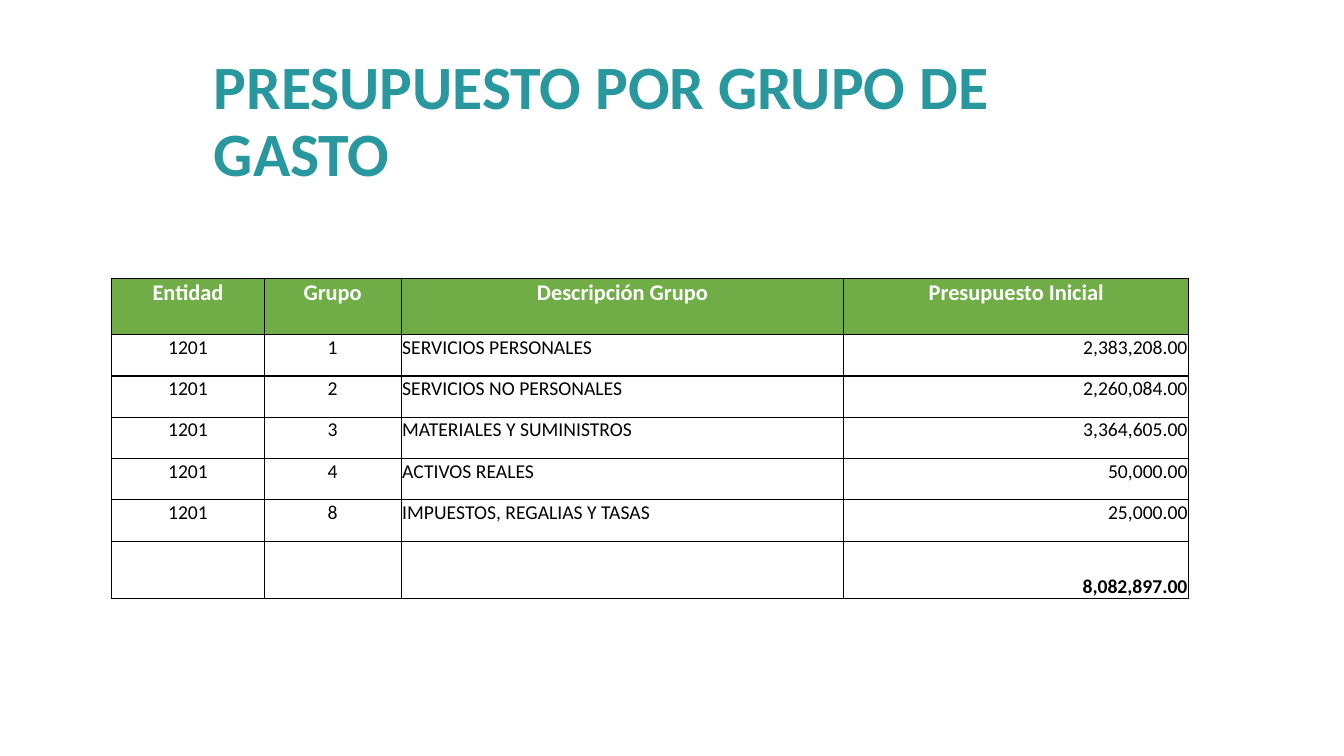
from lxml import etree
from pptx import Presentation
from pptx.dml.color import RGBColor
from pptx.enum.text import MSO_ANCHOR, MSO_AUTO_SIZE, PP_ALIGN
from pptx.oxml.ns import qn
from pptx.util import Inches, Pt

LEFT, CENTER, RIGHT = PP_ALIGN.LEFT, PP_ALIGN.CENTER, PP_ALIGN.RIGHT
TOP, MIDDLE, BOTTOM = MSO_ANCHOR.TOP, MSO_ANCHOR.MIDDLE, MSO_ANCHOR.BOTTOM

# Content
TITLE = "PRESUPUESTO POR GRUPO DE GASTO"
HEADER = ("Entidad", "Grupo", "Descripción Grupo", "Presupuesto Inicial")
ENTITY = "1201"
GROUPS = [
    ("1", "SERVICIOS PERSONALES", "2,383,208.00"),
    ("2", "SERVICIOS NO PERSONALES", "2,260,084.00"),
    ("3", "MATERIALES Y SUMINISTROS", "3,364,605.00"),
    ("4", "ACTIVOS REALES", "50,000.00"),
    ("8", "IMPUESTOS, REGALIAS Y TASAS", "25,000.00"),
]
TOTAL = ("", "", "", "8,082,897.00")

# Layout and theme
TITLE_BOX = {"left": 2.02, "top": 0.5, "width": 9.4, "height": 1.44}
TABLE_LEFT, TABLE_TOP = 1.11, 2.76
COLUMN_WIDTHS = (1.51, 1.36, 4.39, 3.42)
HEADER_HEIGHT, GROUP_HEIGHT, TOTAL_HEIGHT = 0.56, 0.41, 0.57
COLUMN_ALIGNMENTS = (CENTER, CENTER, LEFT, RIGHT)
CELL_MARGINS = {"margin_left": 0.01, "margin_right": 0.01,
                "margin_top": 0.01, "margin_bottom": 0}
THEME = {
    "font": "Calibri",
    "title": {"size": 44, "color": "28989E", "bold": True},
    "header": {"size": 16, "color": "FFFFFF", "bold": True},
    "body": {"size": 14, "color": "000000", "bold": False},
    "total": {"size": 14, "color": "000000", "bold": True},
    "header_fill": "70AD47",
    "body_fill": "FFFFFF",
    "border": "000000",
    "border_width": 1,
}


def format_font(font, style):
    values = {"name": THEME["font"], "size": Pt(style["size"]), "bold": style["bold"]}
    for name, value in values.items():
        setattr(font, name, value)
    font.color.rgb = RGBColor.from_string(style["color"])


def add_borders(cell):
    properties = cell._tc.get_or_add_tcPr()
    for side in ("a:lnL", "a:lnR", "a:lnT", "a:lnB"):
        line = etree.SubElement(properties, qn(side), w=str(Pt(THEME["border_width"])))
        fill = etree.SubElement(line, qn("a:solidFill"))
        etree.SubElement(fill, qn("a:srgbClr"), val=THEME["border"])


def fill_cell(cell, text, style, fill, alignment, anchor):
    for name, value in CELL_MARGINS.items():
        setattr(cell, name, Inches(value))
    cell.vertical_anchor = anchor
    add_borders(cell)
    cell.fill.solid()
    cell.fill.fore_color.rgb = RGBColor.from_string(fill)
    paragraph = cell.text_frame.paragraphs[0]
    paragraph.alignment = alignment
    if text:
        run = paragraph.add_run()
        run.text = text
        format_font(run.font, style)


def add_title(slide):
    title = slide.shapes.title
    for name, value in TITLE_BOX.items():
        setattr(title, name, Inches(value))
    frame = title.text_frame
    frame.text = TITLE
    frame.word_wrap = True
    frame.auto_size = MSO_AUTO_SIZE.NONE
    frame.vertical_anchor = MIDDLE
    paragraph = frame.paragraphs[0]
    paragraph.alignment = LEFT
    paragraph.line_spacing = 0.9
    format_font(paragraph.runs[0].font, THEME["title"])


def add_budget_table(slide):
    # Each row: texts, height, style, fill, alignments, anchor
    header = (HEADER, HEADER_HEIGHT, THEME["header"], THEME["header_fill"],
              (CENTER,) * len(HEADER), TOP)
    groups = [((ENTITY, *group), GROUP_HEIGHT, THEME["body"], THEME["body_fill"],
               COLUMN_ALIGNMENTS, TOP) for group in GROUPS]
    total = (TOTAL, TOTAL_HEIGHT, THEME["total"], THEME["body_fill"],
             COLUMN_ALIGNMENTS, BOTTOM)
    rows = [header, *groups, total]
    table = slide.shapes.add_table(
        len(rows), len(HEADER), Inches(TABLE_LEFT), Inches(TABLE_TOP),
        Inches(sum(COLUMN_WIDTHS)), Inches(sum(row[1] for row in rows))).table
    table.horz_banding = False
    for column, width in zip(table.columns, COLUMN_WIDTHS):
        column.width = Inches(width)
    for table_row, (texts, height, style, fill, alignments, anchor) in zip(table.rows, rows):
        table_row.height = Inches(height)
        for cell, text, alignment in zip(table_row.cells, texts, alignments):
            fill_cell(cell, text, style, fill, alignment, anchor)


def main():
    presentation = Presentation()
    presentation.slide_width = Inches(13.33)
    presentation.slide_height = Inches(7.5)
    slide = presentation.slides.add_slide(presentation.slide_layouts[5])
    add_title(slide)
    add_budget_table(slide)
    presentation.save("out.pptx")


if __name__ == "__main__":
    main()
